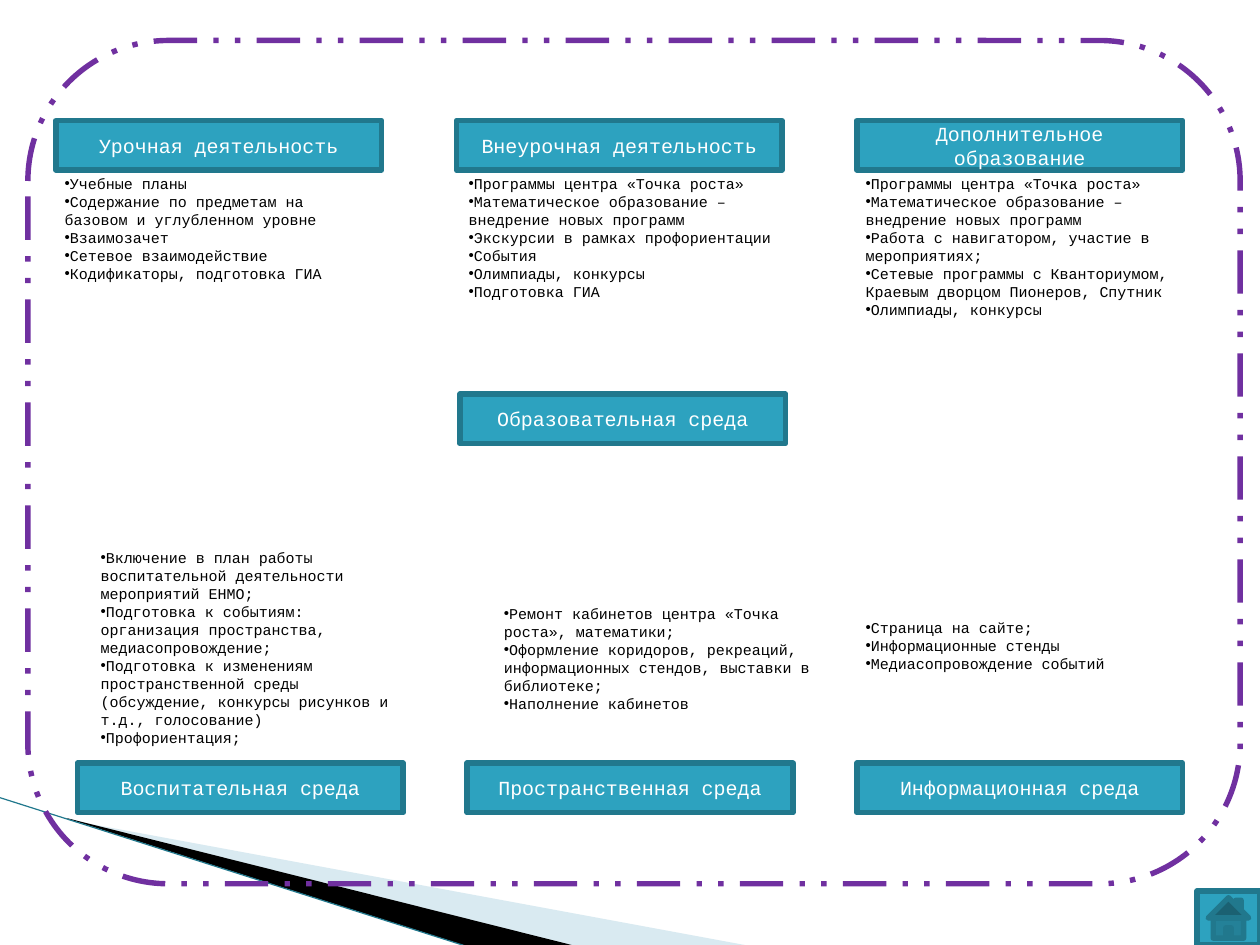
"""Build the slide on the parts of a school's educational environment."""
from dataclasses import dataclass

from lxml.etree import SubElement
from pptx import Presentation
from pptx.dml.color import RGBColor
from pptx.enum.dml import MSO_LINE
from pptx.enum.shapes import MSO_CONNECTOR, MSO_SHAPE
from pptx.enum.text import MSO_ANCHOR, MSO_AUTO_SIZE, PP_ALIGN
from pptx.oxml.ns import qn
from pptx.util import Inches, Pt

TEAL = RGBColor(0x2D, 0xA2, 0xBF)
DARK_TEAL = RGBColor(0x21, 0x78, 0x8D)
PALE_BLUE = RGBColor(0xA0, 0xCB, 0xDC)
PURPLE = RGBColor(0x70, 0x30, 0xA0)
BLACK = RGBColor(0x00, 0x00, 0x00)
WHITE = RGBColor(0xFF, 0xFF, 0xFF)
FONT = "Courier New"
BORDER = Pt(4.33)
CARD_W, CARD_H = 3.62, 0.55
TOP_ROW, CENTRE_ROW, BOTTOM_ROW = 1.34, 4.38, 8.48
LAST_COL = 9.52
TOP_STEP, BOTTOM_STEP = 4.45, 4.33
Point = tuple[float, float]


@dataclass
class Section:
    """A headed list, with the place of the list's text box."""
    title: str
    left: float
    top: float
    height: float
    items: tuple[str, ...]


TOP_SECTIONS = (
    Section("Урочная деятельность", 0.62, 1.89, 1.31, (
        "Учебные планы",
        "Содержание по предметам на базовом и углубленном уровне",
        "Взаимозачет",
        "Сетевое взаимодействие",
        "Кодификаторы, подготовка ГИА")),
    Section("Внеурочная деятельность", 5.11, 1.89, 1.72, (
        "Программы центра «Точка роста»",
        "Математическое образование – внедрение новых программ",
        "Экскурсии в рамках профориентации",
        "События",
        "Олимпиады, конкурсы",
        "Подготовка ГИА")),
    Section("Дополнительное образование", LAST_COL, 1.89, 1.72, (
        "Программы центра «Точка роста»",
        "Математическое образование – внедрение новых программ",
        "Работа с навигатором, участие в мероприятиях;",
        "Сетевые программы с Кванториумом, Краевым дворцом Пионеров, Спутник",
        "Олимпиады, конкурсы")),
)
BOTTOM_SECTIONS = (
    Section("Воспитательная среда", 1.02, 6.04, 2.12, (
        "Включение в план работы воспитательной деятельности мероприятий ЕНМО;",
        "Подготовка к событиям: организация пространства, медиасопровождение;",
        "Подготовка к изменениям пространственной среды "
        "(обсуждение, конкурсы рисунков и т.д., голосование)",
        "Профориентация;")),
    Section("Пространственная среда", 5.5, 6.67, 1.51, (
        "Ремонт кабинетов центра «Точка роста», математики;",
        "Оформление коридоров, рекреаций, информационных стендов, "
        "выставки в библиотеке;",
        "Наполнение кабинетов")),
    Section("Информационная среда", LAST_COL, 6.82, 0.91, (
        "Страница на сайте;",
        "Информационные стенды",
        "Медиасопровождение событий")),
)


def add_run(p, text: str, size: float, color: RGBColor) -> None:
    """Add one formatted run to a paragraph."""
    r = p.add_run()
    r.text = text
    r.font.size, r.font.name = Pt(size), FONT
    r.font.color.rgb = color


def add_box(slide, kind: MSO_SHAPE, left: float, top: float,
            width: float, height: float):
    """Add a teal preset shape with a dark border."""
    sp = slide.shapes.add_shape(
        kind, Inches(left), Inches(top), Inches(width), Inches(height))
    sp.shadow.inherit = False
    sp.fill.solid()
    sp.fill.fore_color.rgb = TEAL
    sp.line.color.rgb = DARK_TEAL
    sp.line.width = BORDER
    return sp


def add_card(slide, title: str, left: float, top: float) -> None:
    """Add a heading card."""
    sp = add_box(slide, MSO_SHAPE.RECTANGLE, left, top, CARD_W, CARD_H)
    tf = sp.text_frame
    tf.word_wrap = True
    tf.vertical_anchor = MSO_ANCHOR.MIDDLE
    p = tf.paragraphs[0]
    p.alignment = PP_ALIGN.CENTER
    add_run(p, title, 16, WHITE)


def add_list(slide, section: Section) -> None:
    """Add the bulleted list of a section."""
    tf = slide.shapes.add_textbox(
        Inches(section.left), Inches(section.top),
        Inches(CARD_W), Inches(section.height)).text_frame
    tf.word_wrap = True
    tf.auto_size = MSO_AUTO_SIZE.SHAPE_TO_FIT_TEXT
    for i, item in enumerate(section.items):
        p = tf.add_paragraph() if i else tf.paragraphs[0]
        pPr = p._p.get_or_add_pPr()
        SubElement(pPr, qn("a:buFont")).set("typeface", "Arial")
        SubElement(pPr, qn("a:buChar")).set("char", "•")
        add_run(p, item, 12, BLACK)


def add_row(slide, sections: tuple[Section, ...], top: float, step: float) -> None:
    """Add a row of sections whose cards end at the last column."""
    first = LAST_COL - step * (len(sections) - 1)
    for i, section in enumerate(sections):
        add_card(slide, section.title, first + i * step, top)
        add_list(slide, section)


def add_wedge(slide, points: tuple[Point, ...], color: RGBColor):
    """Add a filled outline without a border."""
    start, *rest = [(Inches(x), Inches(y)) for x, y in points]
    builder = slide.shapes.build_freeform(*start)
    builder.add_line_segments(rest, close=True)
    sp = builder.convert_to_shape()
    sp.shadow.inherit = False
    sp.fill.solid()
    sp.fill.fore_color.rgb = color
    sp.line.fill.background()
    return sp


def add_corner(slide) -> None:
    """Add the wedges and the thin line in the lower left corner."""
    pale = add_wedge(slide, ((0.76, 9.11), (8.33, 10.51), (6.38, 10.51),
                             (0.77, 9.1)), PALE_BLUE)
    color = pale._element.spPr.find(qn("a:solidFill"))[0]
    SubElement(color, qn("a:alpha")).set("val", "40000")
    add_wedge(slide, ((0.74, 9.09), (6.39, 10.51), (5.21, 10.52),
                      (0.76, 9.1)), BLACK)
    line = slide.shapes.add_connector(
        MSO_CONNECTOR.STRAIGHT, Inches(-0.01), Inches(8.86),
        Inches(5.2), Inches(10.52))
    line.line.color.rgb = DARK_TEAL
    line.line.width = Pt(0.95)
    SubElement(line._element.spPr, qn("a:effectLst"))


def add_frame(slide) -> None:
    """Add the dashed rounded frame around the slide."""
    sp = add_box(slide, MSO_SHAPE.ROUNDED_RECTANGLE, 0.31, 0.45, 13.47, 9.37)
    sp.fill.background()
    sp.line.color.rgb = PURPLE
    sp.line.dash_style = MSO_LINE.DASH_DOT_DOT


def main() -> None:
    """Build and save the presentation."""
    prs = Presentation()
    prs.slide_width, prs.slide_height = Inches(14), Inches(10.5)
    slide = prs.slides.add_slide(prs.slide_layouts[6])
    add_corner(slide)
    add_card(slide, "Образовательная среда", 5.11, CENTRE_ROW)
    add_row(slide, TOP_SECTIONS, TOP_ROW, TOP_STEP)
    add_row(slide, BOTTOM_SECTIONS, BOTTOM_ROW, BOTTOM_STEP)
    add_box(slide, MSO_SHAPE.ACTION_BUTTON_HOME, 13.3, 9.9, 0.7, 0.6)
    add_frame(slide)
    prs.save("out.pptx")


if __name__ == "__main__":
    main()
